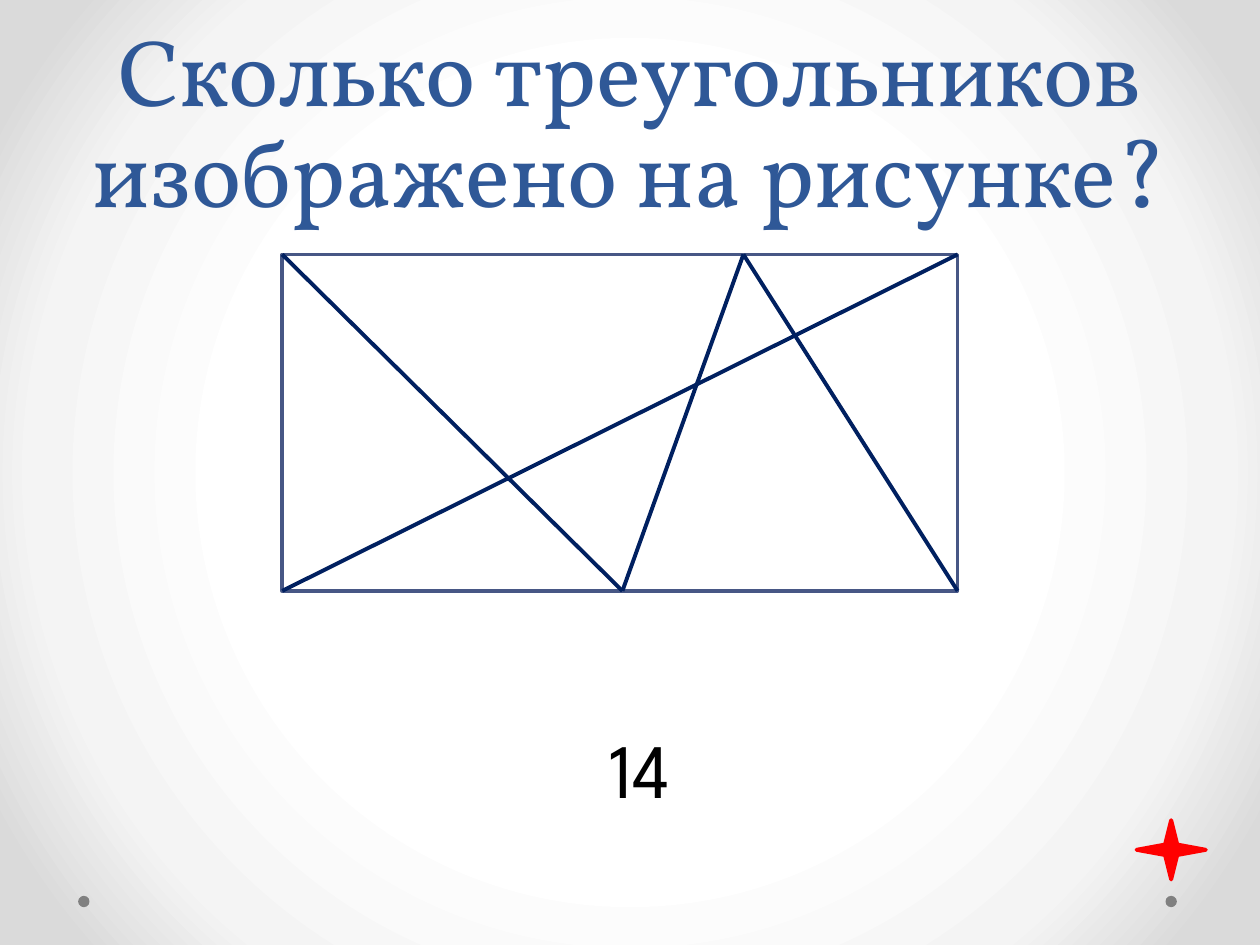
import lxml.etree
import pptx
import pptx.dml.color
import pptx.enum.shapes
import pptx.enum.text
import pptx.oxml
import pptx.oxml.ns
import pptx.util

Inches, Pt = pptx.util.Inches, pptx.util.Pt
RGBColor = pptx.dml.color.RGBColor
MSO_SHAPE = pptx.enum.shapes.MSO_SHAPE
MSO_ANCHOR = pptx.enum.text.MSO_ANCHOR
qn = pptx.oxml.ns.qn

BLUE = RGBColor(0x2F, 0x58, 0x97)
NAVY = RGBColor(0x00, 0x20, 0x60)
FRAME = RGBColor(0x47, 0x57, 0x85)
GRAY = RGBColor(0x80, 0x80, 0x80)
RED = RGBColor(0xFF, 0x00, 0x00)
WHITE = RGBColor(0xFF, 0xFF, 0xFF)
BLACK = RGBColor(0x00, 0x00, 0x00)
BACKGROUND_STOPS = [(50, WHITE), (76, RGBColor(0xF4, 0xF4, 0xF4)),
                    (92, RGBColor(0xDA, 0xDA, 0xDA))]


def add_filled(shapes, kind, x, y, w, h, fill, line=None):
    s = shapes.add_shape(kind, Inches(x), Inches(y), Inches(w), Inches(h))
    s.shadow.inherit = False
    s.fill.solid()
    s.fill.fore_color.rgb = fill
    if line is None:
        s.line.fill.background()
    else:
        s.line.color.rgb = line
        s.line.width = Pt(2.25)


def write(tf, text, font, size, color, anchor):
    """Put one centred run into the frame."""
    tf.word_wrap = True
    tf.auto_size = pptx.enum.text.MSO_AUTO_SIZE.NONE
    tf.vertical_anchor = anchor
    p = tf.paragraphs[0]
    p.alignment = pptx.enum.text.PP_ALIGN.CENTER
    r = p.add_run()
    r.text = text
    r.font.name = font
    r.font.size = Pt(size)
    r.font.color.rgb = color


prs = pptx.Presentation()
prs.slide_width, prs.slide_height = Inches(10), Inches(7.5)
slide = prs.slides.add_slide(prs.slide_layouts[5])

# Radial background
slide.background.fill.gradient()
grad = slide.background._cSld.find(".//" + qn("a:gradFill"))
for child in list(grad):
    grad.remove(child)
stops = lxml.etree.SubElement(grad, qn("a:gsLst"))
for pos, color in BACKGROUND_STOPS:
    gs = lxml.etree.SubElement(stops, qn("a:gs"), pos=str(pos * 1000))
    lxml.etree.SubElement(gs, qn("a:srgbClr"), val=str(color))
radial = lxml.etree.SubElement(grad, qn("a:path"), {"path": "circle"})
lxml.etree.SubElement(radial, qn("a:fillToRect"),
                      {side: "50000" for side in "ltrb"})

for x in (9.25, 0.62):
    add_filled(slide.shapes, MSO_SHAPE.OVAL, x, 7.11, 0.09, 0.09, GRAY)

title = slide.shapes.title
title.left, title.top = Inches(0), Inches(0.13)
title.width, title.height = Inches(10), Inches(1.72)
write(title.text_frame, "Сколько треугольников изображено на рисунке?",
      "Vollkorn", 54, BLUE, MSO_ANCHOR.BOTTOM)
title.text_frame.paragraphs[0].line_spacing = Pt(58)

answer = slide.shapes.add_textbox(Inches(2.56), Inches(5.47), Inches(5.04), Inches(1.25))
write(answer.text_frame, "14", "League Spartan", 44, BLACK, MSO_ANCHOR.MIDDLE)

add_filled(slide.shapes, MSO_SHAPE.STAR_4_POINT, 9.02, 6.51, 0.55, 0.47, RED, RED)

# Rectangle cut by four segments
left, right, top, bottom = 2.24, 7.6, 2.02, 4.69
bottom_point, top_point = (4.94, bottom), (5.9, top)
segments = [
    ((left, top), bottom_point),
    ((left, bottom), (right, top)),
    (bottom_point, top_point),
    (top_point, (right, bottom)),
]
figure = slide.shapes.add_group_shape()
add_filled(figure.shapes, MSO_SHAPE.RECTANGLE, left, top, right - left, bottom - top,
           WHITE, FRAME)
for (x1, y1), (x2, y2) in segments:
    s = figure.shapes.add_connector(pptx.enum.shapes.MSO_CONNECTOR.STRAIGHT,
                                    Inches(x1), Inches(y1), Inches(x2), Inches(y2))
    s.line.color.rgb = NAVY
    s.line.width = Pt(2.25)
    lxml.etree.SubElement(s._element.spPr, qn("a:effectLst"))

prs.save("out.pptx")
